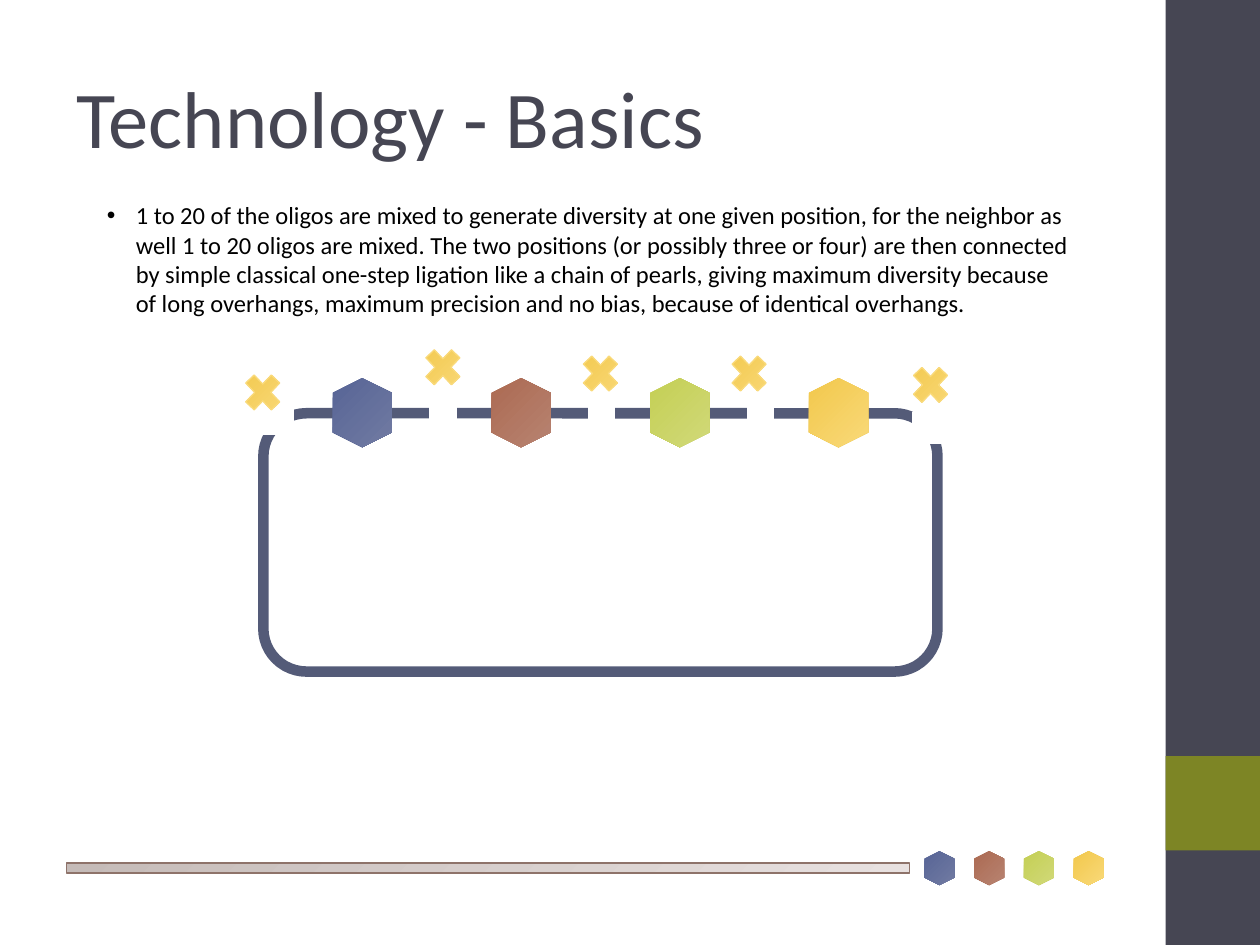
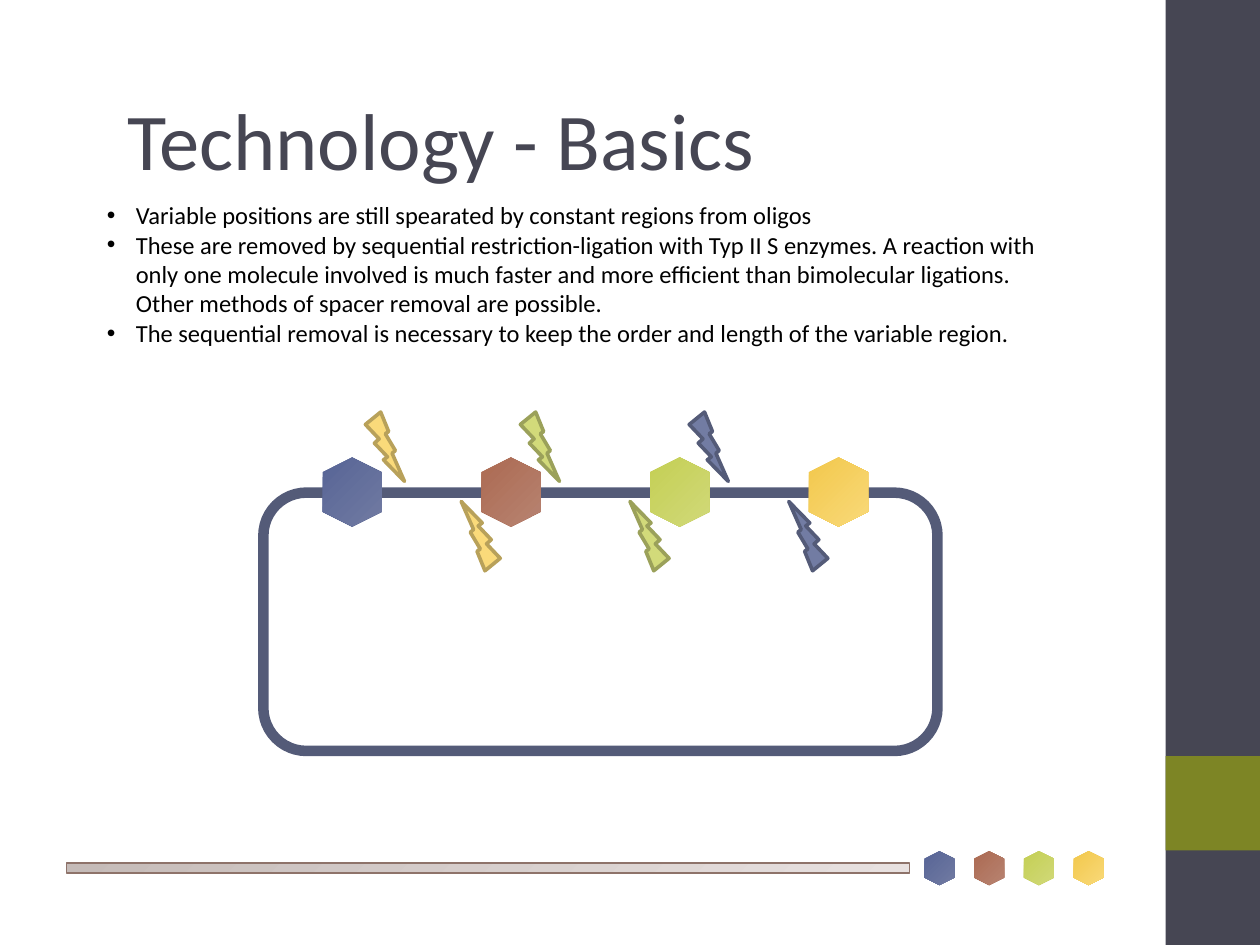
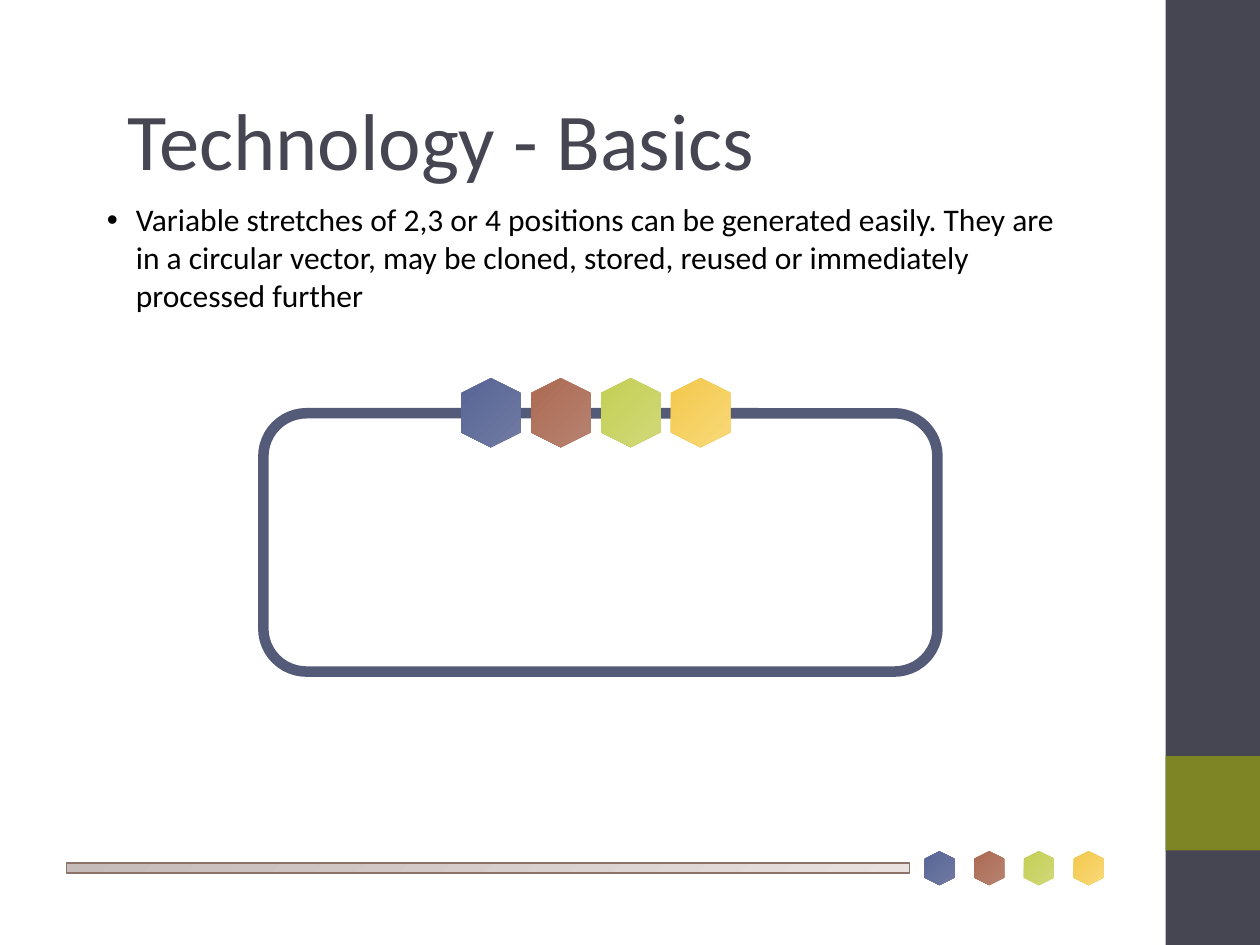
from dataclasses import dataclass
from typing import NamedTuple, Optional, Union

from lxml.etree import SubElement
from pptx import Presentation
from pptx.dml.color import RGBColor
from pptx.enum.shapes import MSO_SHAPE
from pptx.enum.text import MSO_ANCHOR, PP_ALIGN
from pptx.oxml.ns import qn
from pptx.shapes.autoshape import Shape
from pptx.slide import Slide
from pptx.util import Emu, Inches, Pt

COLUMNS, ROWS = 20, 15
SLIDE_WIDTH, SLIDE_HEIGHT = Inches(10), Inches(7.5)
FONT = "Calibri"
TITLE_SIZE = 46
TITLE_ONLY = 5

SLATE = RGBColor(0x46, 0x46, 0x53)
OLIVE = RGBColor(0x7D, 0x85, 0x25)
WHITE = RGBColor(0xFF, 0xFF, 0xFF)
BLACK = RGBColor(0x00, 0x00, 0x00)
BROWN = RGBColor(0x8E, 0x73, 0x6A)
NAVY = RGBColor(0x54, 0x5B, 0x78)
BLUE = RGBColor(0x72, 0x7C, 0xA3)
LIME = RGBColor(0xD2, 0xDA, 0x7A)
DARK_LIME = RGBColor(0x9B, 0xA1, 0x5A)
GOLD = RGBColor(0xFA, 0xDA, 0x7A)
DARK_GOLD = RGBColor(0xB8, 0xA1, 0x5A)


class Box(NamedTuple):
    left: float
    top: float
    width: float
    height: float


class Gradient(NamedTuple):
    start: RGBColor
    end: RGBColor


class Line(NamedTuple):
    color: RGBColor
    width: float


class BoltPair(NamedTuple):
    upper_left: float
    lower_left: float
    fill: RGBColor
    line: RGBColor


@dataclass(frozen=True)
class Vector:
    top: float
    hexagon_lefts: tuple[float, ...]


@dataclass(frozen=True)
class Page:
    title_box: Box
    bullets: tuple[str, ...]
    bullet_size: int
    bullet_rows: float
    vector: Vector
    cuts: tuple[Box, ...] = ()
    crosses: tuple[tuple[float, float], ...] = ()
    bolts: tuple[BoltPair, ...] = ()


Fill = Union[RGBColor, Gradient]

RULE_GRADIENT = Gradient(RGBColor(0xC5, 0xBB, 0xB8), RGBColor(0xE8, 0xE1, 0xE0))
GOLD_GRADIENT = Gradient(RGBColor(0xF2, 0xC8, 0x4C), RGBColor(0xF9, 0xD9, 0x79))
HEXAGON_GRADIENTS = (
    Gradient(RGBColor(0x57, 0x64, 0x96), RGBColor(0x71, 0x7B, 0xA2)),
    Gradient(RGBColor(0xAC, 0x6A, 0x52), RGBColor(0xB7, 0x83, 0x71)),
    Gradient(RGBColor(0xC4, 0xCF, 0x54), RGBColor(0xD1, 0xD9, 0x79)),
    GOLD_GRADIENT,
)

LOWER_TITLE = Box(1.82, 0.94, 16.64, 2.5)
OLIGO_PITCH = 2.52

PAGES = (
    Page(
        title_box=Box(1.02, 0.6, 16.64, 2.5),
        bullets=(
            "1 to 20 of the oligos are mixed to generate diversity at one given position, "
            "for the neighbor as well 1 to 20 oligos are mixed. The two positions (or "
            "possibly three or four) are then connected by simple classical one-step "
            "ligation like a chain of pearls, giving maximum diversity because of long "
            "overhangs, maximum precision and no bias, because of identical overhangs.",
        ),
        bullet_size=14,
        bullet_rows=3.12,
        vector=Vector(6.56, tuple(5.2 + OLIGO_PITCH * i for i in range(4))),
        cuts=(
            Box(4.02, 6.4, 0.62, 0.48),
            *(Box(6.84 + OLIGO_PITCH * i, 6.32, 0.38, 0.46) for i in range(3)),
            Box(14.5, 6.56, 0.54, 0.46),
        ),
        crosses=((3.78, 5.82), (6.64, 5.42), (9.14, 5.52), (11.5, 5.52), (14.38, 5.7)),
    ),
    Page(
        title_box=LOWER_TITLE,
        bullets=(
            "Variable positions are still spearated by constant regions from oligos",
            "These are removed by sequential restriction-ligation with Typ II S enzymes. "
            "A reaction with only one molecule involved is much faster and more efficient "
            "than bimolecular ligations. Other methods of spacer removal are possible.",
            "The sequential removal is necessary to keep the order and length of the "
            "variable region.",
        ),
        bullet_size=14,
        bullet_rows=4.32,
        vector=Vector(7.82, (5.04, 7.56, 10.24, 12.76)),
        bolts=(
            BoltPair(5.8, 7.32, GOLD, DARK_GOLD),
            BoltPair(8.26, 10, LIME, DARK_LIME),
            BoltPair(10.94, 12.52, BLUE, NAVY),
        ),
    ),
    Page(
        title_box=LOWER_TITLE,
        bullets=(
            "Variable stretches of 2,3 or 4 positions can be generated easily. They are "
            "in a circular vector, may be cloned, stored, reused or immediately "
            "processed further",
        ),
        bullet_size=18,
        bullet_rows=3.2,
        vector=Vector(6.56, tuple(7.24 + 1.11 * i for i in range(4))),
    ),
)


def place(box: Box) -> tuple[Emu, Emu, Emu, Emu]:
    column, row = SLIDE_WIDTH / COLUMNS, SLIDE_HEIGHT / ROWS
    return (
        Emu(round(box.left * column)),
        Emu(round(box.top * row)),
        Emu(round(box.width * column)),
        Emu(round(box.height * row)),
    )


def draw_shape(
    slide: Slide,
    kind: MSO_SHAPE,
    box: Box,
    fill: Fill,
    line: Optional[Line] = None,
    rotation: int = 0,
) -> Shape:
    shape = slide.shapes.add_shape(kind, *place(box))
    shape.shadow.inherit = False
    shape.rotation = rotation
    if isinstance(fill, Gradient):
        shape.fill.gradient()
        shape.fill.gradient_angle = (315 + rotation) % 360
        for stop, color, position in zip(shape.fill.gradient_stops, fill, (0, 1)):
            stop.color.rgb = color
            stop.position = position
    else:
        shape.fill.solid()
        shape.fill.fore_color.rgb = fill
    if line:
        shape.line.color.rgb = line.color
        shape.line.width = Pt(line.width)
    else:
        shape.line.fill.background()
    return shape


def draw_hexagons(
    slide: Slide, lefts: tuple[float, ...], top: float, width: float, height: float
) -> None:
    for left, gradient in zip(lefts, HEXAGON_GRADIENTS):
        draw_shape(slide, MSO_SHAPE.HEXAGON, Box(left, top, width, height), gradient, rotation=90)


def draw_frame(slide: Slide) -> None:
    draw_shape(slide, MSO_SHAPE.RECTANGLE, Box(18.5, 0, 1.5, ROWS), SLATE)
    draw_shape(slide, MSO_SHAPE.RECTANGLE, Box(18.5, 12, 1.5, 1.5), OLIVE)
    draw_shape(
        slide, MSO_SHAPE.RECTANGLE, Box(1.06, 13.7, 13.38, 0.16), RULE_GRADIENT, Line(BROWN, 0.75)
    )
    draw_hexagons(slide, tuple(14.64 + 0.79 * i for i in range(4)), 13.54, 0.54, 0.48)


def draw_title(slide: Slide, box: Box) -> None:
    title = slide.shapes.title
    title.left, title.top, title.width, title.height = place(box)
    title.text_frame.text = "Technology - Basics"
    title.text_frame.vertical_anchor = MSO_ANCHOR.MIDDLE
    paragraph = title.text_frame.paragraphs[0]
    paragraph.alignment = PP_ALIGN.LEFT
    font = paragraph.runs[0].font
    font.name, font.size, font.color.rgb = FONT, Pt(TITLE_SIZE), SLATE


def draw_bullets(slide: Slide, page: Page) -> None:
    text_box = slide.shapes.add_textbox(*place(Box(1.5, 3.08, 15.74, page.bullet_rows)))
    text_frame = text_box.text_frame
    text_frame.word_wrap = True
    text_frame.text = "\n".join(page.bullets)
    indent = Inches(0.23)
    for paragraph in text_frame.paragraphs:
        properties = paragraph._p.get_or_add_pPr()
        properties.set("marL", str(indent))
        properties.set("indent", str(-indent))
        SubElement(properties, qn("a:buFont"), typeface="Arial")
        SubElement(properties, qn("a:buChar"), char="•")
        font = paragraph.runs[0].font
        font.name, font.size, font.color.rgb = FONT, Pt(page.bullet_size), BLACK


def draw_vector(slide: Slide, vector: Vector) -> None:
    ring = Box(4.18, vector.top, 10.7, 4.1)
    draw_shape(slide, MSO_SHAPE.ROUNDED_RECTANGLE, ring, WHITE, Line(NAVY, 6))
    draw_hexagons(slide, vector.hexagon_lefts, vector.top - 0.48, 1.1, 0.94)


def draw_bolts(slide: Slide, pair: BoltPair) -> None:
    for left, top, rotation in ((pair.upper_left, 6.54, 0), (pair.lower_left, 7.96, 180)):
        draw_shape(
            slide,
            MSO_SHAPE.LIGHTNING_BOLT,
            Box(left, top, 0.62, 1.1),
            pair.fill,
            Line(pair.line, 2.07),
            rotation,
        )


def draw_page(slide: Slide, page: Page) -> None:
    draw_frame(slide)
    draw_title(slide, page.title_box)
    draw_bullets(slide, page)
    draw_vector(slide, page.vector)
    for cut in page.cuts:
        draw_shape(slide, MSO_SHAPE.RECTANGLE, cut, WHITE, Line(WHITE, 2.07))
    for left, top in page.crosses:
        cross = Box(left, top, 0.78, 0.82)
        draw_shape(slide, MSO_SHAPE.MATH_MULTIPLY, cross, GOLD_GRADIENT, Line(GOLD, 0.75))
    for pair in page.bolts:
        draw_bolts(slide, pair)


def main() -> None:
    presentation = Presentation()
    presentation.slide_width, presentation.slide_height = SLIDE_WIDTH, SLIDE_HEIGHT
    layout = presentation.slide_layouts[TITLE_ONLY]
    for page in PAGES:
        draw_page(presentation.slides.add_slide(layout), page)
    presentation.save("out.pptx")


if __name__ == "__main__":
    main()
